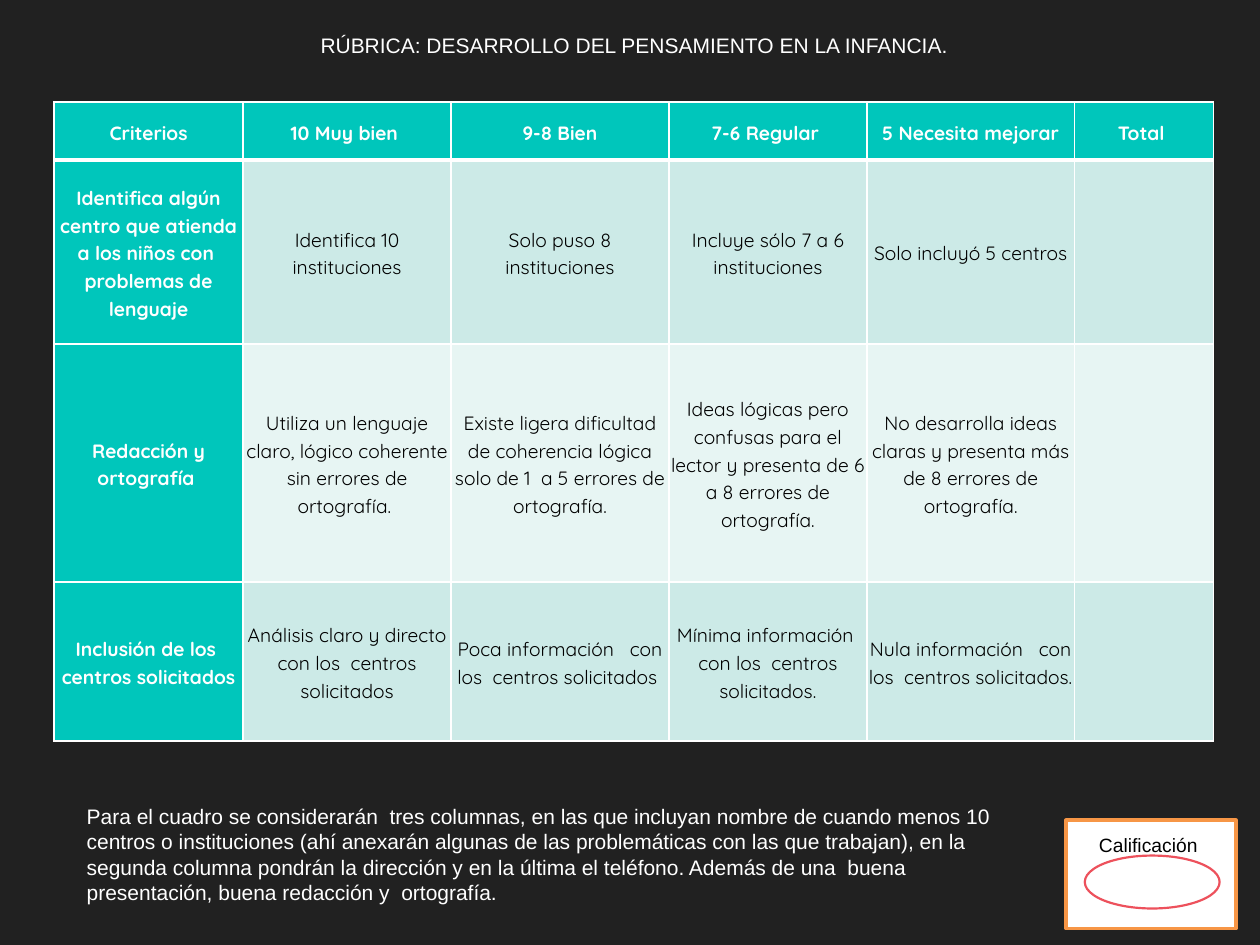
from dataclasses import dataclass

from lxml.etree import SubElement
from pptx import Presentation
from pptx.dml.color import RGBColor
from pptx.enum.shapes import MSO_SHAPE as Preset
from pptx.enum.text import MSO_ANCHOR as Anchor, PP_ALIGN as Align
from pptx.oxml.ns import qn
from pptx.util import Inches, Pt

COLORS = {
    "background": "212121",
    "white": "FFFFFF",
    "black": "000000",
    "heading": "00C6BB",
    "odd_row": "CCEAE7",
    "even_row": "E7F5F3",
    "grade_border": "F79646",
    "grade_oval": "ED515C",
}

COLUMN_WIDTHS = (1.5, 1.65, 1.73, 1.57, 1.65, 1.1)
ROW_HEIGHTS = (0.46, 1.46, 1.89, 1.26)
RUBRIC = (
    ("Criterios", "10 Muy bien ", "9-8 Bien", "7-6 Regular ", "5 Necesita mejorar", "Total "),
    (
        "Identifica algún centro que atienda a los niños con  problemas de lenguaje",
        "Identifica 10 instituciones",
        "Solo puso 8 instituciones",
        "Incluye sólo 7 a 6 instituciones",
        "Solo incluyó 5 centros",
        "",
    ),
    (
        "Redacción y ortografía ",
        "Utiliza un lenguaje claro, lógico coherente sin errores de ortografía. ",
        "Existe ligera dificultad de coherencia lógica solo de 1  a 5 errores de ortografía.",
        "Ideas lógicas pero confusas para el lector y presenta de 6 a 8 errores de ortografía.",
        "No desarrolla ideas claras y presenta más de 8 errores de ortografía.",
        "",
    ),
    (
        "Inclusión de los  centros solicitados",
        "Análisis claro y directo con los  centros solicitados",
        "Poca información   con los  centros solicitados ",
        "Mínima información  con los  centros solicitados.",
        "Nula información   con los  centros solicitados. ",
        "",
    ),
)


@dataclass(frozen=True)
class Box:
    left: float
    top: float
    width: float
    height: float

    def lengths(self) -> tuple:
        return tuple(map(Inches, (self.left, self.top, self.width, self.height)))


@dataclass(frozen=True)
class TextStyle:
    size: float
    color: str
    font: str = "Arial"
    bold: bool = False
    align: Align = Align.CENTER
    spacing: float = 1.0


@dataclass(frozen=True)
class GradeShape:
    preset: Preset
    box: Box
    border: str
    weight: float


@dataclass(frozen=True)
class Note:
    text: str
    box: Box
    align: Align


GRADE_SHAPES = (
    GradeShape(Preset.RECTANGLE, Box(8.46, 6.51, 1.35, 0.86), "grade_border", 2),
    GradeShape(Preset.OVAL, Box(8.61, 6.79, 1.07, 0.42), "grade_oval", 1.25),
)
NOTES = (
    Note(
        "RÚBRICA: DESARROLLO DEL PENSAMIENTO EN LA INFANCIA.",
        Box(2.36, 0.21, 5.35, 0.61),
        Align.CENTER,
    ),
    Note(
        "Para el cuadro se considerarán  tres columnas, en las que incluyan nombre de cuando "
        "menos 10 centros o instituciones (ahí anexarán algunas de las problemáticas con las "
        "que trabajan), en la segunda columna pondrán la dirección y en la última el teléfono. "
        "Además de una  buena presentación, buena redacción y  ortografía.",
        Box(0.59, 6.33, 7.73, 0.91),
        Align.LEFT,
    ),
)


def rgb(name: str) -> RGBColor:
    return RGBColor.from_string(COLORS[name])


def paint(target, color: str) -> None:
    target.fill.solid()
    target.fill.fore_color.rgb = rgb(color)


def write(frame, text: str, style: TextStyle) -> None:
    frame.word_wrap = True
    paragraph = frame.paragraphs[0]
    paragraph.text = text
    paragraph.alignment = style.align
    paragraph.line_spacing = style.spacing
    font = paragraph.font
    font.name, font.size, font.bold = style.font, Pt(style.size), style.bold
    font.color.rgb = rgb(style.color)


def add_borders(cell, top: float, bottom: float) -> None:
    properties = cell._tc.get_or_add_tcPr()
    for side, weight in (("L", 1), ("R", 1), ("T", top), ("B", bottom)):
        border = SubElement(properties, qn(f"a:ln{side}"), w=str(Pt(weight)))
        fill = SubElement(border, qn("a:solidFill"))
        SubElement(fill, qn("a:srgbClr"), val=COLORS["white"])


def add_rubric(slide, box: Box) -> None:
    table = slide.shapes.add_table(len(RUBRIC), len(COLUMN_WIDTHS), *box.lengths()).table
    for column, width in zip(table.columns, COLUMN_WIDTHS):
        column.width = Inches(width)
    for row, height in zip(table.rows, ROW_HEIGHTS):
        row.height = Inches(height)
    for row, texts in enumerate(RUBRIC):
        for column, text in enumerate(texts):
            cell = table.cell(row, column)
            is_heading = row == 0 or column == 0
            add_borders(cell, top=3 if row == 1 else 1, bottom=3 if row == 0 else 1)
            paint(cell, "heading" if is_heading else "odd_row" if row % 2 else "even_row")
            cell.vertical_anchor = Anchor.MIDDLE
            cell.margin_left = cell.margin_right = Inches(0.01)
            cell.margin_top = cell.margin_bottom = Inches(0)
            if text:
                color = "white" if is_heading else "black"
                write(cell.text_frame, text,
                      TextStyle(11, color, "Quicksand", is_heading, spacing=1.15))


def add_grade_shape(slide, part: GradeShape):
    shape = slide.shapes.add_shape(part.preset, *part.box.lengths())
    shape.shadow.inherit = False
    paint(shape, "white")
    shape.line.color.rgb = rgb(part.border)
    shape.line.width = Pt(part.weight)
    return shape


def add_note(slide, note: Note) -> None:
    frame = slide.shapes.add_textbox(*note.box.lengths()).text_frame
    frame.vertical_anchor = Anchor.TOP
    write(frame, note.text, TextStyle(12, "white", align=note.align))


def main() -> None:
    presentation = Presentation()
    presentation.slide_width, presentation.slide_height = Inches(10), Inches(7.5)
    slide = presentation.slides.add_slide(presentation.slide_layouts[6])
    paint(slide.background, "background")

    add_rubric(slide, Box(0.43, 0.81, sum(COLUMN_WIDTHS), sum(ROW_HEIGHTS)))
    grade_card, _ = [add_grade_shape(slide, part) for part in GRADE_SHAPES]
    grade_label = grade_card.text_frame
    grade_label.vertical_anchor = Anchor.TOP
    grade_label.margin_top = Inches(0.1)
    write(grade_label, "Calificación ", TextStyle(11, "black"))
    for note in NOTES:
        add_note(slide, note)

    presentation.save("out.pptx")


if __name__ == "__main__":
    main()
